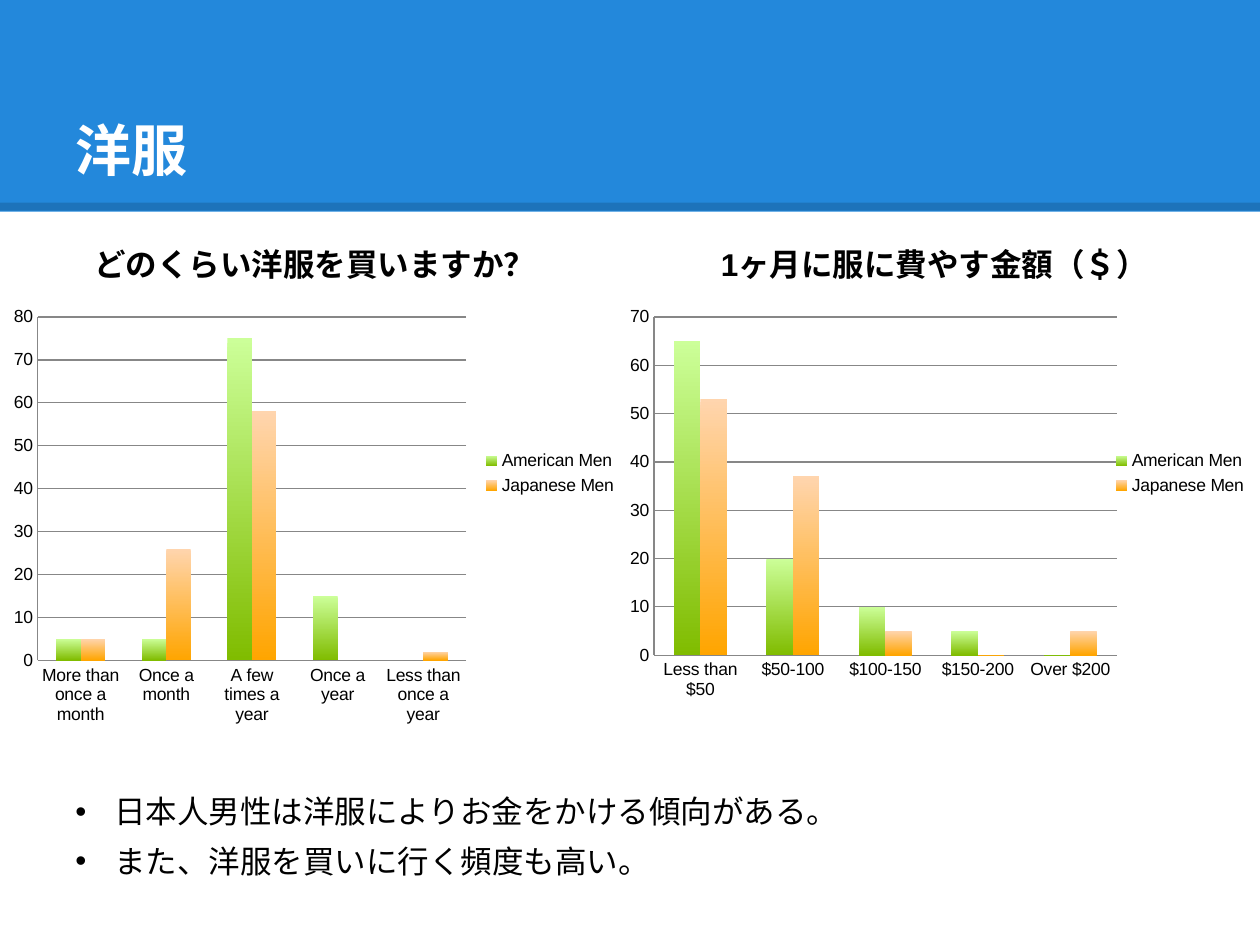
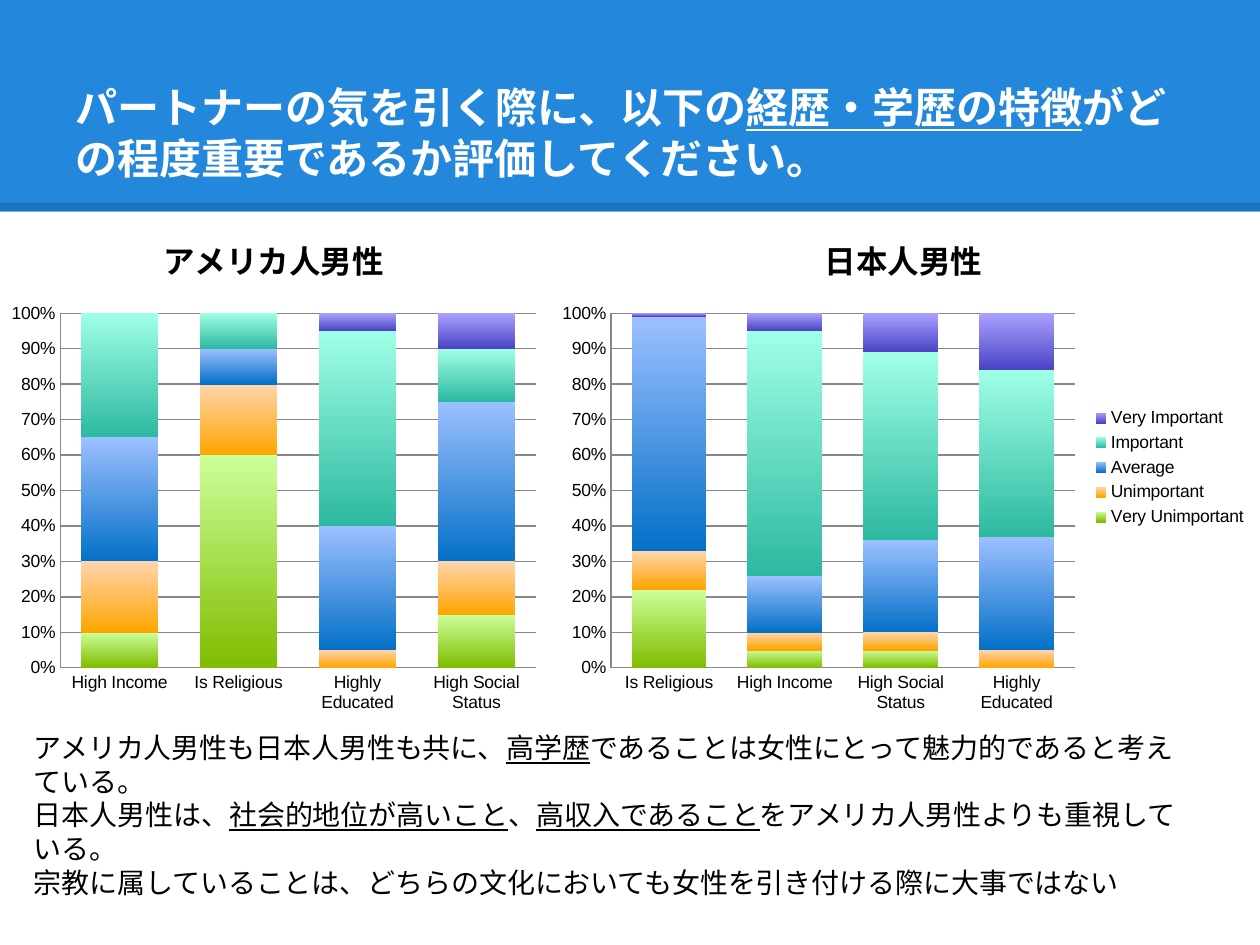
from lxml.etree import SubElement
from pptx import Presentation
from pptx.chart.data import CategoryChartData
from pptx.dml.color import RGBColor
from pptx.enum.chart import XL_CHART_TYPE as ChartType, XL_LEGEND_POSITION as LegendPosition
from pptx.enum.chart import XL_TICK_MARK as TickMark
from pptx.enum.shapes import MSO_CONNECTOR as Connector, MSO_SHAPE as Shape
from pptx.enum.text import MSO_ANCHOR as Anchor
from pptx.oxml.ns import qn
from pptx.util import Inches, Pt

# Content: underlined words stand between underscores.
# Chart areas and body areas are left, top, width, height in inches;
# plot areas are shares of the chart.
MEN = ["American Men", "Japanese Men"]
RATINGS = ["Very Unimportant", "Unimportant", "Average", "Important", "Very Important"]
SLIDES = [
    {
        "title": "洋服", "title_size": 32, "kind": "clustered",
        "charts": [
            {
                "title": "どのくらい洋服を買いますか？",
                "area": (0, 1.69, 5, 4.13), "plot": (0.06, 0.2, 0.68, 0.66),
                "legend": True, "names": MEN,
                "rows": {
                    "More than once a month": (5, 5),
                    "Once a month": (5, 26),
                    "A few times a year": (75, 58),
                    "Once a year": (15, 0),
                    "Less than once a year": (0, 2),
                },
            },
            {
                "title": "1ヶ月に服に費やす金額（＄）",
                "area": (4.83, 1.69, 5.17, 4.13), "plot": (0.07, 0.2, 0.71, 0.65),
                "legend": True, "names": MEN,
                "rows": {
                    "Less than $50": (65, 53),
                    "$50-100": (20, 37),
                    "$100-150": (10, 5),
                    "$150-200": (5, 0),
                    "Over $200": (0, 5),
                },
            },
        ],
        "body": {
            "area": (0.5, 6.15, 8.85, 0.89), "size": 18, "spacing": 1.3, "bullet": "•",
            "lines": [
                "日本人男性は洋服によりお金をかける傾向がある。",
                "また、洋服を買いに行く頻度も高い。",
            ],
        },
    },
    {
        "title": "パートナーの気を引く際に、以下の_経歴・学歴の特徴_がどの程度重要であるか評価してください。",
        "title_size": 24, "kind": "stacked",
        "charts": [
            {
                "title": "アメリカ人男性",
                "area": (0, 1.67, 4.34, 4.08), "plot": (0.11, 0.2, 0.87, 0.69),
                "legend": False, "names": [f"Series {n}" for n in range(1, 6)],
                "rows": {
                    "High Income": (10, 20, 35, 35, 0),
                    "Is Religious": (60, 20, 10, 10, 0),
                    "Highly Educated": (0, 5, 35, 55, 5),
                    "High Social Status": (15, 15, 45, 15, 10),
                },
            },
            {
                "title": "日本人男性",
                "area": (4.34, 1.67, 5.66, 4.08), "plot": (0.09, 0.2, 0.65, 0.69),
                "legend": True, "names": RATINGS,
                "rows": {
                    "Is Religious": (22, 11, 66, 0, 1),
                    "High Income": (5, 5, 16, 69, 5),
                    "High Social Status": (5, 5, 26, 53, 11),
                    "Highly Educated": (0, 5, 32, 47, 16),
                },
            },
        ],
        "body": {
            "area": (0.17, 5.75, 9.33, 1.45), "size": 16, "spacing": None, "bullet": None,
            "lines": [
                "アメリカ人男性も日本人男性も共に、_高学歴_であることは女性にとって魅力的であると考えている。",
                "日本人男性は、_社会的地位が高いこと_、_高収入であること_をアメリカ人男性よりも重視している。",
                "宗教に属していることは、どちらの文化においても女性を引き付ける際に大事ではない",
            ],
        },
    },
]

# Theme
THEME = {
    "font": "Arial", "band": "2388DB", "rule": "000000", "text": "000000",
    "title": "FFFFFF", "grid": "878787", "chart_size": 10, "chart_title_size": 18,
    "gradients": [("CCFF99", "80BC00"), ("FFD5AE", "FFA500"), ("9CC0FF", "0470C8"),
                  ("9FFFE6", "2DB9A0"), ("A9A1FF", "4C43C5")],
}
KINDS = {
    "clustered": (ChartType.COLUMN_CLUSTERED, {"gap_width": 150, "overlap": 0}, "General"),
    "stacked": (ChartType.COLUMN_STACKED_100, {"gap_width": 55, "overlap": 100}, "0%"),
}
SLIDE_SIZE = (10, 7.5)
BAND_HEIGHT, RULE_TOP, RULE_WIDTH = 1.68, 1.64, 4.5
TITLE_AREA = (0.5, 0.3, 9, 1.25)
BULLET_INDENT = 0.31


def apply(target, **values):
    for name, value in values.items():
        setattr(target, name, value)


def color(name):
    return RGBColor.from_string(THEME.get(name, name))


def inches(area):
    return [Inches(length) for length in area]


def style_font(font, size, color_name="text", **values):
    apply(font, name=THEME["font"], size=Pt(size), **values)
    font.color.rgb = color(color_name)


def style_line(line, color_name, width):
    line.color.rgb = color(color_name)
    line.width = Pt(width)


def add_runs(paragraph, text, size, color_name="text", **values):
    for index, part in enumerate(text.split("_")):
        if part:
            run = paragraph.add_run()
            run.text = part
            style_font(run.font, size, color_name, underline=index % 2 == 1, **values)


def add_text_frame(slide, area, **values):
    frame = slide.shapes.add_textbox(*inches(area)).text_frame
    apply(frame, word_wrap=True, **values)
    return frame


# Blue band, darker rule and title
def add_header(slide, title, size):
    band = slide.shapes.add_shape(Shape.RECTANGLE, *inches((0, 0, SLIDE_SIZE[0], BAND_HEIGHT)))
    band.shadow.inherit = False
    band.fill.solid()
    band.fill.fore_color.rgb = color("band")
    band.line.fill.background()

    rule = slide.shapes.add_connector(
        Connector.STRAIGHT, *inches((0, RULE_TOP, SLIDE_SIZE[0], RULE_TOP)))
    style_line(rule.line, "rule", RULE_WIDTH)
    properties = rule.line.fill.fore_color  # the line is solid from here on
    properties.rgb = color("rule")
    solid = next(rule.element.iter(qn("a:srgbClr")))
    SubElement(solid, qn("a:alpha"), val="15000")
    SubElement(rule.element.spPr, qn("a:effectLst"))

    margin = Inches(0.1)
    frame = add_text_frame(slide, TITLE_AREA, vertical_anchor=Anchor.BOTTOM,
                           margin_top=margin, margin_bottom=margin)
    add_runs(frame.paragraphs[0], title, size, "title", bold=True)


def place_plot(chart, shares):
    plot_area = next(chart.element.iter(qn("c:plotArea")))
    layout = plot_area.find(qn("c:layout"))
    if layout is None:
        layout = SubElement(plot_area, qn("c:layout"))
        plot_area.insert(0, layout)
    manual = SubElement(layout, qn("c:manualLayout"))
    settings = [("layoutTarget", "inner"), ("xMode", "edge"), ("yMode", "edge"),
                *zip("xywh", shares)]
    for name, value in settings:
        SubElement(manual, qn(f"c:{name}"), val=str(value))


def add_chart(slide, kind, content):
    chart_type, plot_format, number_format = KINDS[kind]
    data = CategoryChartData()
    data.categories = list(content["rows"])
    for name, values in zip(content["names"], zip(*content["rows"].values())):
        data.add_series(name, values)
    chart = slide.shapes.add_chart(chart_type, *inches(content["area"]), data).chart
    style_font(chart.font, THEME["chart_size"])
    add_runs(chart.chart_title.text_frame.paragraphs[0], content["title"],
             THEME["chart_title_size"], bold=True)

    # Axes and legend
    for axis in (chart.category_axis, chart.value_axis):
        apply(axis, major_tick_mark=TickMark.NONE, minor_tick_mark=TickMark.NONE)
        style_line(axis.format.line, "grid", 0.75)
    chart.value_axis.has_major_gridlines = True
    style_line(chart.value_axis.major_gridlines.format.line, "grid", 0.75)
    apply(chart.value_axis.tick_labels, number_format=number_format,
          number_format_is_linked=False)
    chart.has_legend = content["legend"]
    if chart.has_legend:
        apply(chart.legend, position=LegendPosition.RIGHT, include_in_layout=False)

    # Columns shaded from light at the top to deep at the bottom
    plot = chart.plots[0]
    apply(plot, vary_by_categories=False, **plot_format)
    for series, shades in zip(plot.series, THEME["gradients"]):
        fill = series.format.fill
        fill.gradient()
        fill.gradient_angle = 270
        for stop, shade in zip(fill.gradient_stops, shades):
            stop.color.rgb = color(shade)
    place_plot(chart, content["plot"])


def add_body(slide, body):
    frame = add_text_frame(slide, body["area"])
    for index, line in enumerate(body["lines"]):
        paragraph = frame.add_paragraph() if index else frame.paragraphs[0]
        add_runs(paragraph, line, body["size"])
        if body["spacing"]:
            paragraph.line_spacing = body["spacing"]
        if body["bullet"]:
            properties = paragraph._p.get_or_add_pPr()
            indent = Inches(BULLET_INDENT)
            properties.set("marL", str(indent))
            properties.set("indent", str(-indent))
            SubElement(properties, qn("a:buFont"), typeface=THEME["font"])
            SubElement(properties, qn("a:buChar"), char=body["bullet"])


def main():
    presentation = Presentation()
    width, height = inches(SLIDE_SIZE)
    apply(presentation, slide_width=width, slide_height=height)
    for content in SLIDES:
        slide = presentation.slides.add_slide(presentation.slide_layouts[6])
        add_header(slide, content["title"], content["title_size"])
        for chart in content["charts"]:
            add_chart(slide, content["kind"], chart)
        add_body(slide, content["body"])
    presentation.save("out.pptx")


if __name__ == "__main__":
    main()
